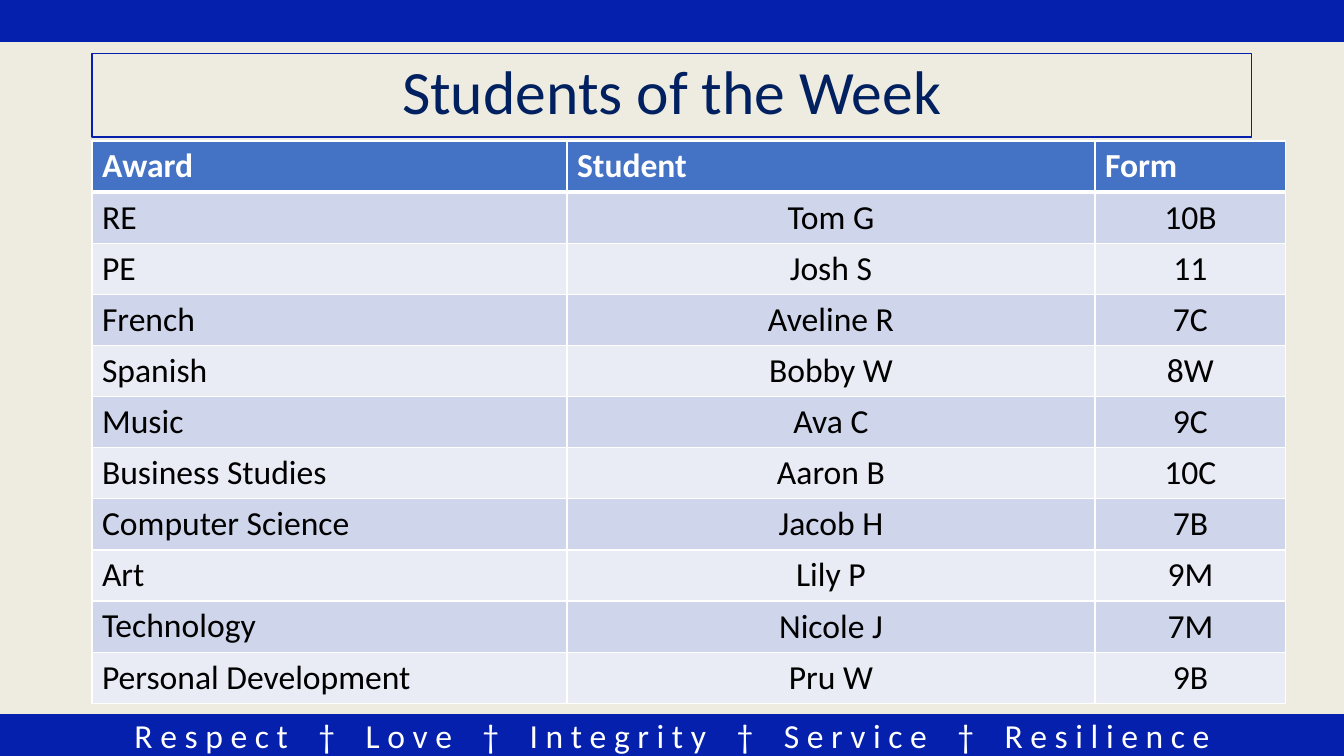
from lxml.etree import SubElement
from pptx import Presentation
from pptx.dml.color import RGBColor
from pptx.enum.shapes import MSO_SHAPE as Shape
from pptx.enum.text import MSO_ANCHOR as Anchor, MSO_AUTO_SIZE as AutoSize, PP_ALIGN as Align
from pptx.oxml.ns import qn
from pptx.util import Pt

SLIDE_WIDTH, SLIDE_HEIGHT = 1344, 756
EMU_PER_PX = 12192000 / SLIDE_WIDTH
BAR_HEIGHT = 41
ROW_HEIGHT = 51
COLUMN_WIDTHS = [475, 528, 191]
VALUES = ["Respect", "Love", "Integrity", "Service", "Resilience"]
HEADINGS = ("Award", "Student", "Form")
AWARDS = [
    ("RE", "Tom G", "10B"),
    ("PE", "Josh S", "11"),
    ("French", "Aveline R", "7C"),
    ("Spanish", "Bobby W", "8W"),
    ("Music", "Ava C", "9C"),
    ("Business Studies", "Aaron B", "10C"),
    ("Computer Science", "Jacob H", "7B"),
    ("Art", "Lily P", "9M"),
    ("Technology", "Nicole J", "7M"),
    ("Personal Development", "Pru W", "9B"),
]


def px(length):
    return round(length * EMU_PER_PX)


def color(value):
    return RGBColor.from_string(value)


class AwardSlide:
    font = "Calibri"
    blue = "0420AC"
    navy = "002060"
    white = "FFFFFF"
    black = "000000"
    header = "4472C4"
    bands = ("CFD5EA", "E9EBF5")

    def __init__(self, deck):
        self.page = deck.slides.add_slide(deck.slide_layouts[5])
        background = self.page.background.fill
        background.solid()
        background.fore_color.rgb = color("EEECE1")

    def style(self, para, size, ink, align, bold=False):
        para.alignment = align
        font = para.font
        font.name, font.size, font.bold = self.font, Pt(size), bold
        font.color.rgb = color(ink)

    def title(self, text, left, top, width, height):
        box = self.page.shapes.title
        box.left, box.top, box.width, box.height = map(px, (left, top, width, height))
        box.line.color.rgb = color(self.blue)
        box.line.width = Pt(0.75)
        frame = box.text_frame
        frame.text = text
        frame.auto_size = AutoSize.NONE
        frame.vertical_anchor = Anchor.MIDDLE
        para = frame.paragraphs[0]
        para.line_spacing = 0.9
        self.style(para, 44, self.navy, Align.CENTER)

    def bar(self, top):
        box = self.page.shapes.add_shape(
            Shape.RECTANGLE, 0, px(top), px(SLIDE_WIDTH), px(BAR_HEIGHT))
        box.shadow.inherit = False
        box.fill.solid()
        box.fill.fore_color.rgb = color(self.blue)
        box.line.color.rgb = color(self.blue)
        box.line.width = Pt(1)
        self.page.shapes.title.element.addprevious(box.element)
        return box

    def motto(self, box, words):
        box.text_frame.vertical_anchor = Anchor.MIDDLE
        para = box.text_frame.paragraphs[0]
        self.style(para, 24, self.white, Align.CENTER)
        for index, word in enumerate(words):
            if index:
                cross = para.add_run()
                cross.text = " †"
                cross.font._element.set("spc", "1630")
            span = para.add_run()
            span.text = (" " if index else "") + " ".join(word)

    def borders(self, cell, top, bottom):
        properties = cell._tc.get_or_add_tcPr()
        for side, points in (("L", 1), ("R", 1), ("T", top), ("B", bottom)):
            line = SubElement(properties, qn(f"a:ln{side}"), w=str(Pt(points)))
            fill = SubElement(line, qn("a:solidFill"))
            SubElement(fill, qn("a:srgbClr"), val=self.white)

    def cell(self, cell, text, row, column):
        is_header = row == 0
        self.borders(cell, 3 if row == 1 else 1, 3 if is_header else 1)
        cell.fill.solid()
        cell.fill.fore_color.rgb = color(self.header if is_header else self.bands[(row - 1) % 2])
        cell.text = text
        centred = column > 0 and not is_header
        if centred:
            cell.vertical_anchor = Anchor.BOTTOM
            cell.margin_left = cell.margin_top = cell.margin_right = px(1)
            cell.margin_bottom = px(5)
        self.style(cell.text_frame.paragraphs[0], 24,
                   self.white if is_header else self.black,
                   Align.CENTER if centred else Align.LEFT, is_header)

    def table(self, rows, left, top):
        table = self.page.shapes.add_table(
            len(rows), len(COLUMN_WIDTHS), px(left), px(top),
            px(sum(COLUMN_WIDTHS)), px(ROW_HEIGHT * len(rows))).table
        for column, width in zip(table.columns, COLUMN_WIDTHS):
            column.width = px(width)
        for row, texts in enumerate(rows):
            table.rows[row].height = px(ROW_HEIGHT)
            for column, text in enumerate(texts):
                self.cell(table.cell(row, column), text, row, column)


def main():
    deck = Presentation()
    deck.slide_width, deck.slide_height = px(SLIDE_WIDTH), px(SLIDE_HEIGHT)
    slide = AwardSlide(deck)
    slide.motto(slide.bar(SLIDE_HEIGHT - BAR_HEIGHT), VALUES)
    slide.bar(0)
    slide.title("Students of the Week", 92, 53, 1160, 84)
    slide.table([HEADINGS, *AWARDS], 92, 141)
    deck.save("out.pptx")


if __name__ == "__main__":
    main()
